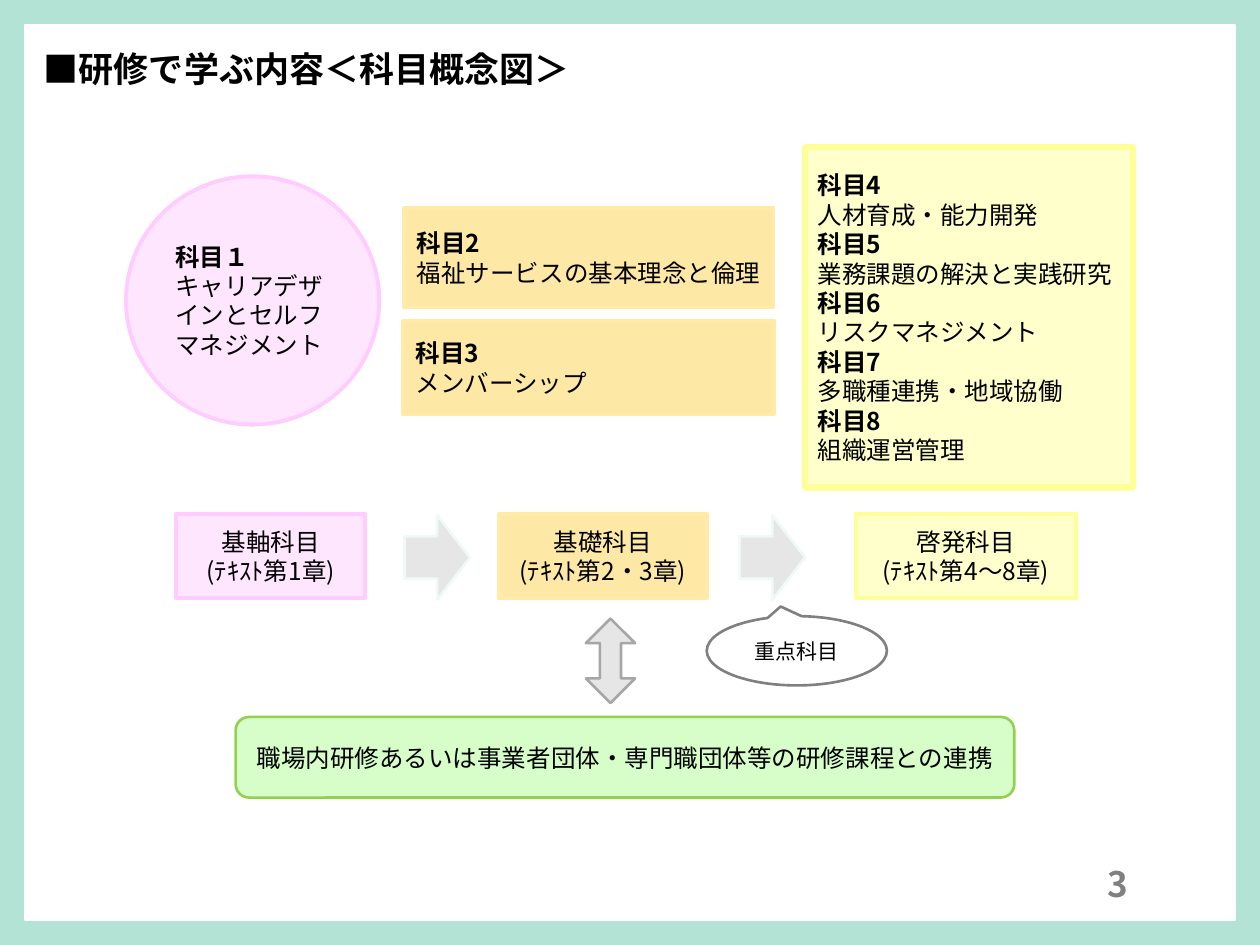
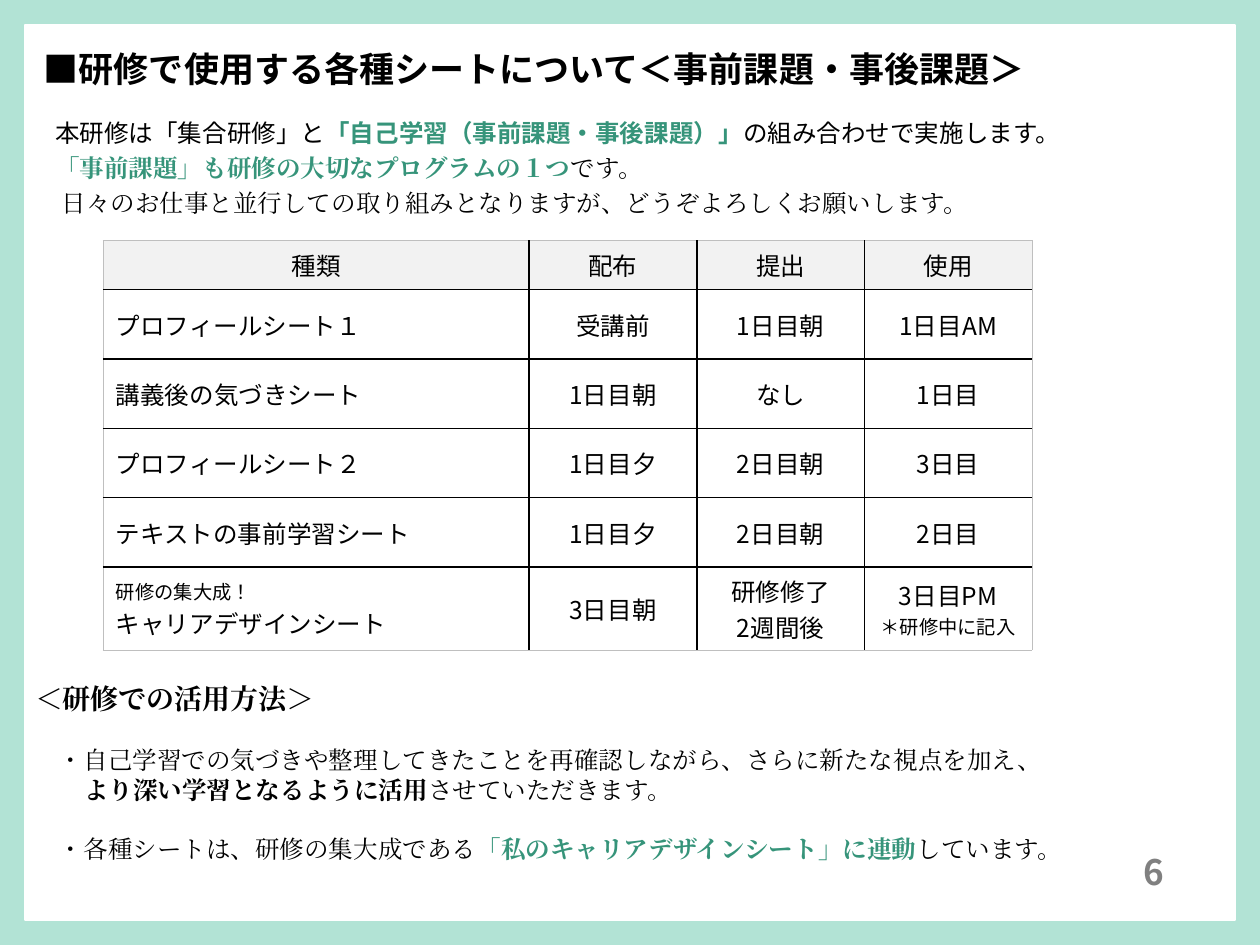
from dataclasses import dataclass

from lxml import etree
from pptx import Presentation
from pptx.dml.color import RGBColor
from pptx.enum.lang import MSO_LANGUAGE_ID as Language
from pptx.enum.shapes import MSO_SHAPE as Shape
from pptx.enum.text import MSO_ANCHOR as Anchor, PP_ALIGN as Align
from pptx.oxml.ns import qn
from pptx.util import Inches, Pt


@dataclass(frozen=True)
class Theme:
    mint: str = "B2E3D5"
    white: str = "FFFFFF"
    black: str = "000000"
    green: str = "36947A"
    gray: str = "808080"
    pink: str = "FFCCFF"
    sand: str = "FDE8A5"
    sand_edge: str = "FFEAA7"
    lemon: str = "FFFFCC"
    lemon_edge: str = "FFFF99"
    arrow: str = "E6E6E6"
    arrow_edge: str = "F0F9F7"
    link_arrow_edge: str = "A6A6A6"
    link: str = "4BFC0C"
    link_edge: str = "92D050"
    header: str = "F2F2F2"
    table_edge: str = "BFBFBF"
    font: str = "Noto Sans CJK JP"
    intro_font: str = "Cabin"
    usage_font: str = "Cambria"
    title_size: float = 20
    heading_size: float = 16
    body_size: float = 14
    label_size: float = 12
    small_size: float = 11


THEME = Theme()


@dataclass(frozen=True)
class Box:
    left: float
    top: float
    width: float
    height: float

    def inner(self, left, top, width, height):
        """Box whose position is measured from this box's corner."""
        return Box(self.left + left, self.top + top, width, height)

    def lengths(self):
        return [Inches(n) for n in (self.left, self.top, self.width, self.height)]


@dataclass(frozen=True)
class Para:
    """Paragraph of runs; a run is a string or (string, format overrides)."""
    runs: tuple
    indent: float = 0
    before: float = 0


PAGE = Box(0, 0, 10, 7.5)
STRONG = dict(bold=True)
ACCENT = dict(bold=True, color=THEME.green)
SMALL = dict(size=THEME.small_size)


def rgb(color):
    return RGBColor.from_string(color)


def style_span(span, size, bold, color, font):
    span.font.size = Pt(size)
    span.font.bold = bold
    span.font.color.rgb = rgb(color)
    span.font.name = font
    span.font.language_id = Language.JAPANESE
    east_asian = etree.SubElement(span.font._element, qn("a:ea"))
    east_asian.set("typeface", font)


def write_text(frame, paras, align=Align.LEFT, leading=None, size=THEME.body_size,
               bold=False, color=THEME.black, font=THEME.font):
    """Fill a text frame; leading is the line pitch in points."""
    base = dict(size=size, bold=bold, color=color, font=font)
    for index, item in enumerate(paras):
        source = item if isinstance(item, Para) else Para((item,))
        para = frame.paragraphs[0] if index == 0 else frame.add_paragraph()
        para.alignment = align
        if leading:
            para.line_spacing = Pt(leading)
        if source.before:
            para.space_before = Pt(source.before)
        if source.indent:
            para._p.get_or_add_pPr().set("marL", str(Inches(source.indent)))
        for run in source.runs:
            words, changes = (run, {}) if isinstance(run, str) else run
            span = para.add_run()
            span.text = words
            style_span(span, **(base | changes))


def add_text(page, box, paras, anchor=Anchor.TOP, **text_format):
    frame = page.shapes.add_textbox(*box.lengths()).text_frame
    frame.word_wrap = True
    frame.vertical_anchor = anchor
    write_text(frame, paras, **text_format)


def add_panel(page, box, kind, fill, line, weight, paras=(), opacity=None,
              adjust=(), **text_format):
    panel = page.shapes.add_shape(kind, *box.lengths())
    panel.shadow.inherit = False
    for index, value in enumerate(adjust):
        panel.adjustments[index] = value
    if fill:
        panel.fill.solid()
        panel.fill.fore_color.rgb = rgb(fill)
    else:
        panel.fill.background()
    if opacity:
        color = panel._element.spPr.find(qn("a:solidFill"))[0]
        etree.SubElement(color, qn("a:alpha")).set("val", str(opacity * 1000))
    panel.line.color.rgb = rgb(line)
    panel.line.width = Pt(weight)
    panel.text_frame.word_wrap = True
    panel.text_frame.vertical_anchor = Anchor.MIDDLE
    write_text(panel.text_frame, paras, **text_format)


def add_page(deck, title, number, number_box):
    page = deck.slides.add_slide(deck.slide_layouts[6])
    page.background.fill.solid()
    page.background.fill.fore_color.rgb = rgb(THEME.mint)
    add_panel(page, PAGE.inner(0.2, 0.2, 9.6, 7.1), Shape.RECTANGLE,
              THEME.white, THEME.white, 1)
    add_text(page, PAGE.inner(0.25, 0.33, 8.8, 0.44), [title],
             size=THEME.title_size, bold=True, leading=24)
    add_text(page, number_box, [str(number)], anchor=Anchor.MIDDLE,
             align=Align.RIGHT, size=THEME.title_size, bold=True, color=THEME.gray)
    return page


def add_subjects(page, area):
    """Subjects 1 to 8, grouped in four panels."""
    names = ["キャリアデザインとセルフマネジメント", "福祉サービスの基本理念と倫理",
             "メンバーシップ", "人材育成・能力開発", "業務課題の解決と実践研究",
             "リスクマネジメント", "多職種連携・地域協働", "組織運営管理"]
    digits = "１2345678"
    sand = (Shape.RECTANGLE, THEME.sand, THEME.sand_edge, 2.25)
    panels = [
        ((0, 0.23, 2.01, 1.97), 0, 1, (Shape.OVAL, THEME.pink, THEME.pink, 2.25), 48),
        ((2.21, 0.48, 2.93, 0.79), 1, 2, sand, None),
        ((2.2, 1.38, 2.94, 0.74), 2, 3, sand, None),
        ((5.39, 0, 2.6, 2.7), 3, 8,
         (Shape.RECTANGLE, THEME.lemon, THEME.lemon_edge, 3.5), None),
    ]
    for place, first, end, look, opacity in panels:
        paras = []
        for digit, name in zip(digits[first:end], names[first:end]):
            paras += [Para(((f"科目{digit}", STRONG),)), name]
        add_panel(page, area.inner(*place), *look, paras, opacity, leading=16.8)


def add_stages(page, area):
    """Three stages joined by block arrows."""
    stages = [
        (0, 1.5, "基軸科目", "1", THEME.pink, THEME.pink, 48),
        (2.56, 1.65, "基礎科目", "2・3", THEME.sand, THEME.sand_edge, None),
        (5.39, 1.75, "啓発科目", "4～8", THEME.lemon, THEME.lemon_edge, None),
    ]
    for left, width, name, chapters, fill, line, opacity in stages:
        add_panel(page, area.inner(left, 0, width, area.height), Shape.RECTANGLE,
                  fill, line, 2.25, [name, f"(ﾃｷｽﾄ第{chapters}章)"], opacity,
                  align=Align.CENTER, leading=16.8)
    for left in (1.81, 4.47):
        add_panel(page, area.inner(left, 0.01, 0.52, area.height), Shape.RIGHT_ARROW,
                  THEME.arrow, THEME.arrow_edge, 1.5)


def add_cooperation(page, area):
    """Callout and the link to other training programmes."""
    add_panel(page, area.inner(2.78, 0.02, 0.39, 0.67), Shape.UP_DOWN_ARROW,
              THEME.arrow, THEME.link_arrow_edge, 1.5, adjust=(0.5, 0.43))
    add_panel(page, area.inner(3.74, 0, 1.43, 0.55), Shape.OVAL_CALLOUT,
              None, THEME.gray, 1.5, ["重点科目"], adjust=(-0.09, -0.64),
              align=Align.CENTER, size=THEME.label_size, leading=14.4)
    add_panel(page, area.inner(0, 0.8, area.width, 0.64), Shape.ROUNDED_RECTANGLE,
              THEME.link, THEME.link_edge, 1.5,
              ["職場内研修あるいは事業者団体・専門職団体等の研修課程との連携"], 22,
              align=Align.CENTER, leading=16.8)


def set_borders(cell, edges):
    """Draw the four sides of a cell; edges maps side to (colour, points)."""
    properties = cell._tc.get_or_add_tcPr()
    for side, (color, weight) in edges.items():
        line = etree.SubElement(properties, qn(f"a:ln{side}"), w=str(Pt(weight)))
        fill = etree.SubElement(line, qn("a:solidFill"))
        etree.SubElement(fill, qn("a:srgbClr"), val=color)


def add_sheet_table(page, box):
    rows = [
        ["種類", "配布", "提出", "使用"],
        ["プロフィールシート１", "受講前", "1日目朝", "1日目AM"],
        ["講義後の気づきシート", "1日目朝", "なし", "1日目"],
        ["プロフィールシート２", "1日目夕", "2日目朝", "3日目"],
        ["テキストの事前学習シート", "1日目夕", "2日目朝", "2日目"],
        [[Para((("研修の集大成！", SMALL),)), "キャリアデザインシート"], "3日目朝",
         ["研修修了", "2週間後"], ["3日目PM", Para((("＊研修中に記入", SMALL),))]],
    ]
    widths = [3.38] + [1.33] * 3
    heights = [0.39] + [0.55] * 4 + [0.66]
    table = page.shapes.add_table(len(rows), len(widths), *box.lengths()).table
    for column, width in zip(table.columns, widths):
        column.width = Inches(width)
    inside, outside = (THEME.black, 1), (THEME.table_edge, 0.5)
    for r, (row, height) in enumerate(zip(rows, heights)):
        table.rows[r].height = Inches(height)
        for c, content in enumerate(row):
            cell = table.cell(r, c)
            set_borders(cell, {
                "L": inside if c else outside,
                "R": inside if c < len(widths) - 1 else outside,
                "T": inside if r else outside,
                "B": inside if r < len(rows) - 1 else outside,
            })
            cell.fill.solid()
            cell.fill.fore_color.rgb = rgb(THEME.white if r else THEME.header)
            cell.vertical_anchor = Anchor.MIDDLE
            write_text(cell.text_frame, [content] if isinstance(content, str) else content,
                       align=Align.LEFT if r and c == 0 else Align.CENTER)


def add_introduction(page, box):
    serif = dict(font=THEME.usage_font)
    add_text(page, box, [
        Para(("本研修は「集合研修」と", ("「自己学習（事前課題・事後課題）」", ACCENT),
              "の組み合わせで実施します。")),
        Para((("「事前課題」も研修の大切なプログラムの１つ", ACCENT | serif),
              ("です。", serif))),
        Para((("日々のお仕事と並行しての取り組みとなりますが、どうぞよろしくお願いします。",
               serif),), indent=0.05),
    ], align=Align.JUSTIFY, leading=20, font=THEME.intro_font)


def add_usage(page, box):
    heading = STRONG | dict(size=THEME.heading_size)
    add_text(page, box, [
        Para((("＜研修での活用方法＞", heading),)),
        Para(("・自己学習での気づきや整理してきたことを再確認しながら、さらに新たな視点を加え、",),
             indent=0.19, before=17),
        Para((("より深い学習となるように活用", STRONG), "させていただきます。"), indent=0.39),
        Para(("・各種シートは、研修の集大成である",
              ("「私のキャリアデザインシート」に連動", ACCENT), "しています。"),
             indent=0.19, before=17),
    ], align=Align.JUSTIFY, leading=17, font=THEME.usage_font)


def build_concept_page(deck):
    page = add_page(deck, "■研修で学ぶ内容＜科目概念図＞", 3,
                    PAGE.inner(7.65, 6.81, 1.4, 0.4))
    add_subjects(page, PAGE.inner(1, 1.17, 8, 2.7))
    add_stages(page, PAGE.inner(1.4, 4.08, 7.14, 0.67))
    add_cooperation(page, PAGE.inner(1.87, 4.89, 6.18, 1.44))


def build_sheets_page(deck):
    page = add_page(deck, "■研修で使用する各種シートについて＜事前課題・事後課題＞", 6,
                    PAGE.inner(7.94, 6.72, 1.4, 0.4))
    add_introduction(page, PAGE.inner(0.34, 0.84, 9.16, 0.92))
    add_sheet_table(page, PAGE.inner(0.82, 1.91, 7.37, 3.25))
    add_usage(page, PAGE.inner(0.18, 5.39, 9.64, 1.53))


def main():
    deck = Presentation()
    deck.slide_width, deck.slide_height = Inches(PAGE.width), Inches(PAGE.height)
    build_concept_page(deck)
    build_sheets_page(deck)
    deck.save("out.pptx")


if __name__ == "__main__":
    main()
